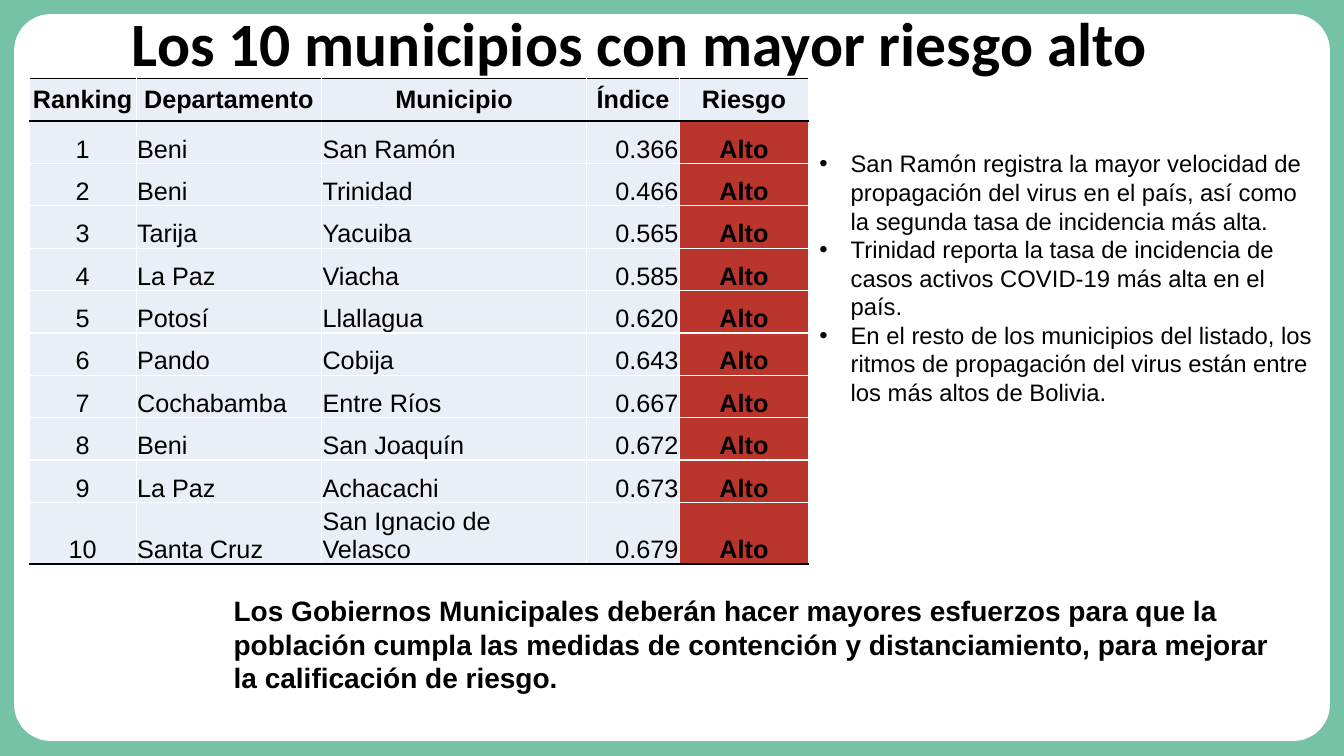
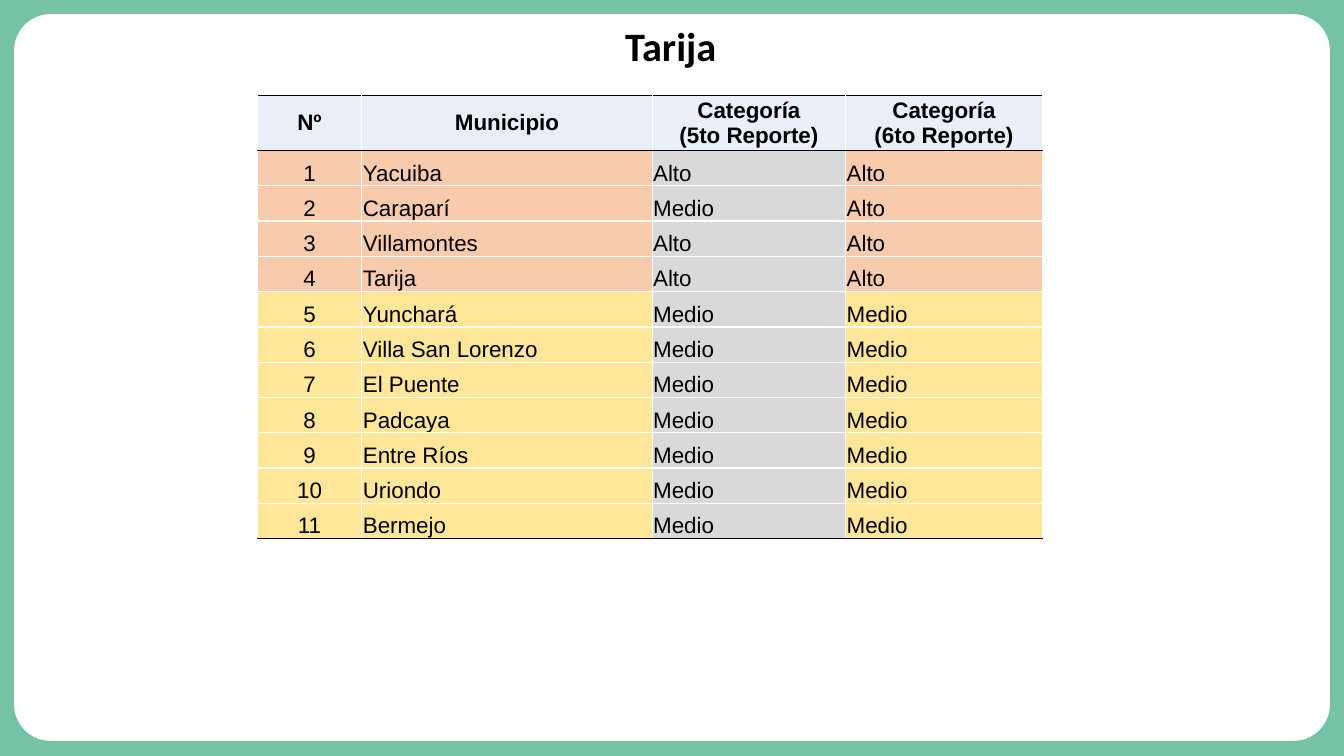
import dataclasses

import lxml.etree
import pptx
import pptx.dml.color
import pptx.enum.shapes
import pptx.enum.text
import pptx.oxml.ns
import pptx.util

ALIGN = pptx.enum.text.PP_ALIGN
ANCHOR = pptx.enum.text.MSO_ANCHOR
FIT = pptx.enum.text.MSO_AUTO_SIZE
ALIGNMENTS = {"l": ALIGN.LEFT, "c": ALIGN.CENTER, "r": ALIGN.RIGHT}
qn = pptx.oxml.ns.qn


@dataclasses.dataclass(frozen=True)
class Theme:
    frame: str = "76C2A5"
    white: str = "FFFFFF"
    black: str = "000000"
    pale_blue: str = "EAEFF7"
    red: str = "BA362C"
    orange: str = "F8CBAD"
    yellow: str = "FFE699"
    gray: str = "D9D9D9"
    title_font: str = "Calibri"
    body_font: str = "Arial"
    bullet_size: float = 17
    note_size: float = 20


theme = Theme()
rgb = pptx.dml.color.RGBColor.from_string

presentation = pptx.Presentation()
presentation.slide_width = pptx.util.Inches(13.33)
presentation.slide_height = pptx.util.Inches(7.5)
column = presentation.slide_width / 100
row = presentation.slide_height / 100
master_fill = presentation.slide_master.background.fill
master_fill.solid()
master_fill.fore_color.rgb = rgb(theme.frame)


def place(left, top, width, height):
    """Turn percentages of the slide's size into lengths."""
    return [int(share * unit) for share, unit in
            zip((left, top, width, height), (column, row, column, row))]


def write(text_frame, text, size, font=theme.body_font, bold=False, align="l"):
    text_frame.word_wrap = True
    text_frame.text = text
    for paragraph in text_frame.paragraphs:
        paragraph.alignment = ALIGNMENTS[align]
        for run in paragraph.runs:
            run.font.name = font
            run.font.size = pptx.util.Pt(size)
            run.font.bold = bold
            run.font.color.rgb = rgb(theme.black)


# Places are left, top, width, height in percent of the slide.
pages = [
    dict(
        title="Los 10 municipios con mayor riesgo alto",
        title_place=(9.08, -1.33, 86.25, 14.93), title_size=44, title_align="l",
        table_corner=(2.18, 10.4), widths=(7.95, 13.8, 19.73, 6.9, 9.6),
        header_height=5.61, row_height=5.61, text_size=18,
        aligns="cllrc", bold_columns=(4,),
        row_fills={"Alto": theme.pale_blue}, column_fills={4: theme.red},
        header=("Ranking", "Departamento", "Municipio", "Índice", "Riesgo"),
        records=[
            ("Beni", "San Ramón", "0.366", "Alto"),
            ("Beni", "Trinidad", "0.466", "Alto"),
            ("Tarija", "Yacuiba", "0.565", "Alto"),
            ("La Paz", "Viacha", "0.585", "Alto"),
            ("Potosí", "Llallagua", "0.620", "Alto"),
            ("Pando", "Cobija", "0.643", "Alto"),
            ("Cochabamba", "Entre Ríos", "0.667", "Alto"),
            ("Beni", "San Joaquín", "0.672", "Alto"),
            ("La Paz", "Achacachi", "0.673", "Alto"),
            ("Santa Cruz", "San Ignacio de Velasco", "0.679", "Alto"),
        ],
    ),
    dict(
        title="Tarija",
        title_place=(3.9, 2.8, 92.03, 7.33), title_size=28.8, title_align="c",
        table_corner=(19.13, 12.67), widths=(7.8, 21.6, 14.4, 14.63),
        header_height=7.24, row_height=4.67, text_size=16,
        aligns="clll", bold_columns=(),
        row_fills={"Alto": theme.orange, "Medio": theme.yellow},
        column_fills={2: theme.gray},
        header=("Nº", "Municipio", "Categoría\n(5to Reporte)", "Categoría\n(6to Reporte)"),
        records=[
            ("Yacuiba", "Alto", "Alto"),
            ("Caraparí", "Medio", "Alto"),
            ("Villamontes", "Alto", "Alto"),
            ("Tarija", "Alto", "Alto"),
            ("Yunchará", "Medio", "Medio"),
            ("Villa San Lorenzo", "Medio", "Medio"),
            ("El Puente", "Medio", "Medio"),
            ("Padcaya", "Medio", "Medio"),
            ("Entre Ríos", "Medio", "Medio"),
            ("Uriondo", "Medio", "Medio"),
            ("Bermejo", "Medio", "Medio"),
        ],
    ),
]

for page in pages:
    slide = presentation.slides.add_slide(presentation.slide_layouts[6])

    panel = slide.shapes.add_shape(
        pptx.enum.shapes.MSO_SHAPE.ROUNDED_RECTANGLE, *place(1.05, 1.87, 97.9, 96.13))
    panel.adjustments[0] = 0.05
    panel.shadow.inherit = False
    panel.fill.solid()
    panel.fill.fore_color.rgb = rgb(theme.white)
    panel.line.fill.background()

    title = slide.shapes.add_textbox(*place(*page["title_place"])).text_frame
    write(title, page["title"], page["title_size"], theme.title_font, True, page["title_align"])
    title.vertical_anchor = ANCHOR.MIDDLE
    title.paragraphs[0].line_spacing = 0.9

    records = [(str(rank), *record) for rank, record in enumerate(page["records"], 1)]
    lines = [page["header"], *records]
    last = len(records)
    heights = [page["header_height"]] + [page["row_height"]] * last
    table = slide.shapes.add_table(
        len(lines), len(page["widths"]),
        *place(*page["table_corner"], sum(page["widths"]), sum(heights))).table
    table.first_row = table.horz_banding = False
    for index, width in enumerate(page["widths"]):
        table.columns[index].width = int(width * column)

    for row_index, line in enumerate(lines):
        table.rows[row_index].height = int(heights[row_index] * row)
        is_header = row_index == 0
        edges = {
            "L": theme.white,
            "R": theme.white,
            "T": theme.black if row_index in (0, 1) else theme.white,
            "B": theme.black if row_index in (0, last) else theme.white,
        }
        for column_index, text in enumerate(line):
            cell = table.cell(row_index, column_index)
            inset = 0 if is_header or column_index == 0 else pptx.util.Inches(0.01)
            cell.margin_left = cell.margin_right = cell.margin_top = inset
            cell.margin_bottom = 0
            cell.vertical_anchor = ANCHOR.MIDDLE if is_header else ANCHOR.BOTTOM
            write(cell.text_frame, text, page["text_size"],
                  bold=is_header or column_index in page["bold_columns"],
                  align="c" if is_header else page["aligns"][column_index])

            properties = cell._tc.get_or_add_tcPr()
            for side, color in edges.items():
                border = lxml.etree.SubElement(
                    properties, qn(f"a:ln{side}"), w=str(pptx.util.Pt(1)))
                solid = lxml.etree.SubElement(border, qn("a:solidFill"))
                lxml.etree.SubElement(solid, qn("a:srgbClr"), val=color)
            if is_header:
                fill = theme.pale_blue
            else:
                fill = page["column_fills"].get(column_index, page["row_fills"][line[-1]])
            cell.fill.solid()
            cell.fill.fore_color.rgb = rgb(fill)

ranking_slide = presentation.slides[0]
findings = [
    "San Ramón registra la mayor velocidad de propagación del virus en el país, "
    "así como la segunda tasa de incidencia más alta.",
    "Trinidad reporta la tasa de incidencia de casos activos COVID-19 más alta en el país.",
    "En el resto de los municipios del listado, los ritmos de propagación del virus "
    "están entre los más altos de Bolivia.",
]
bullets = ranking_slide.shapes.add_textbox(*place(60.23, 19.07, 38.4, 35.73)).text_frame
write(bullets, "\n".join(findings), theme.bullet_size)
bullets.auto_size = FIT.SHAPE_TO_FIT_TEXT
indent = pptx.util.Inches(0.31)
for paragraph in bullets.paragraphs:
    properties = paragraph._p.get_or_add_pPr()
    properties.set("marL", str(indent))
    properties.set("indent", str(-indent))
    lxml.etree.SubElement(properties, qn("a:buFont"), typeface=theme.body_font)
    lxml.etree.SubElement(properties, qn("a:buChar"), char="•")

note = ranking_slide.shapes.add_textbox(*place(16.65, 77.87, 79.2, 14.8)).text_frame
write(note, "Los Gobiernos Municipales deberán hacer mayores esfuerzos para que la "
      "población cumpla las medidas de contención y distanciamiento, para mejorar "
      "la calificación de riesgo.", theme.note_size, bold=True)
note.auto_size = FIT.SHAPE_TO_FIT_TEXT

presentation.save("out.pptx")
